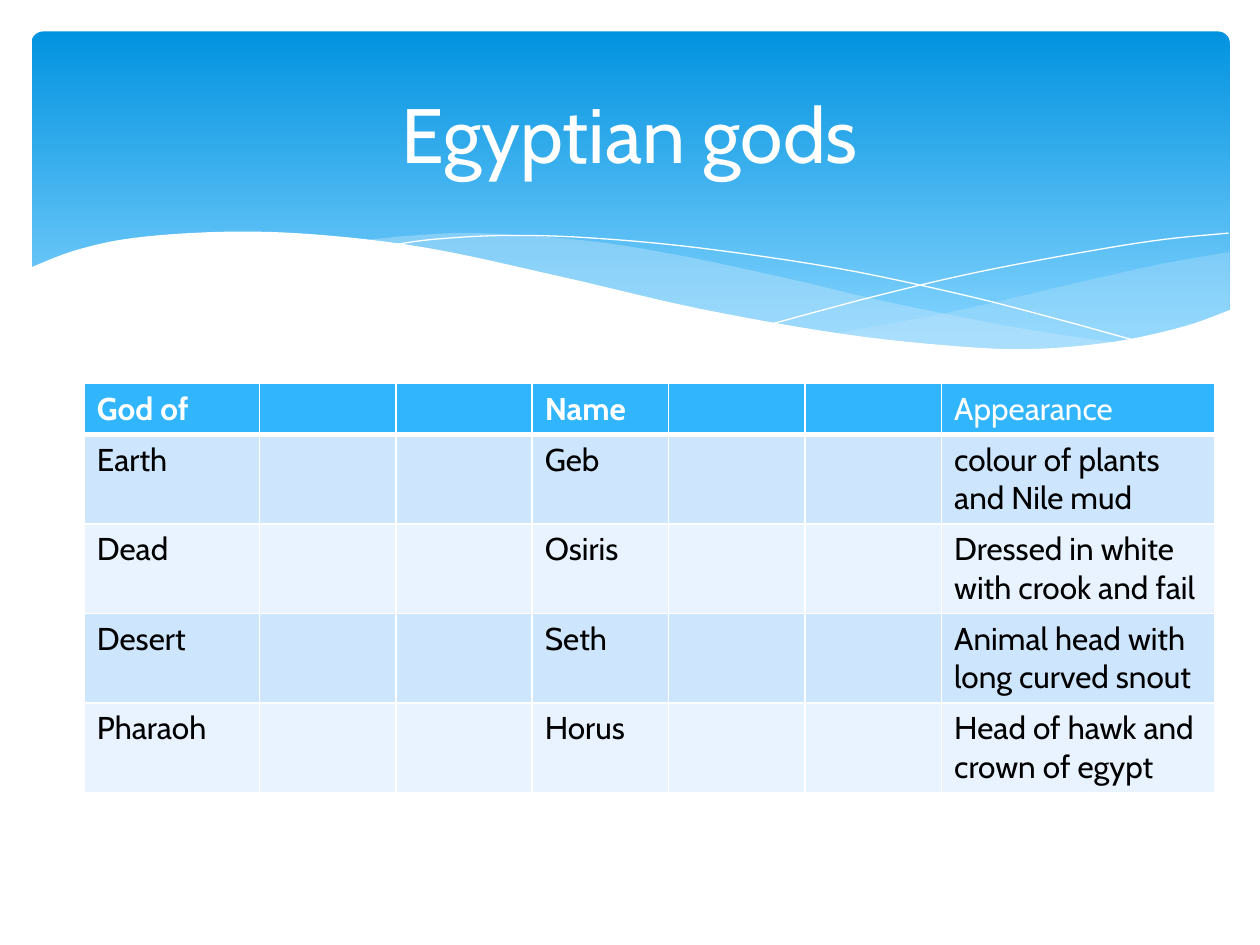
import pptx
import pptx.dml.color
import pptx.enum.shapes
import pptx.enum.text
import pptx.oxml
import pptx.oxml.ns
import pptx.util
from lxml import etree

Pt = pptx.util.Pt
qn = pptx.oxml.ns.qn

FONT = "Cabin"
COLORS = {
    "white": "FFFFFF", "black": "000000",
    "sky_top": "0293E0", "sky_bottom": "83D3FE", "swell": "C6E7FC",
    "header": "31B6FD", "odd_row": "CEE5FE", "even_row": "E8F3FF",
}

# Wave knots, in points from the top left corner of the banner
WHITE_WAVE = [(-1.5, 135.4), (24.5, 125.3), (58.3, 118), (109.4, 114.5), (162, 116),
              (226.8, 123.8), (303.8, 140.4), (381.6, 158.4), (463, 172.8), (530, 180),
              (574.6, 181.4), (620.6, 177), (658.8, 168.5), (685.4, 159)]
WHITE_BASE = [(685.4, 219), (-1.5, 219)]
RIGHT_SWELL_TOP = [(684.7, 126), (645, 133), (602, 142.6), (524, 160.6), (458, 172.8)]
RIGHT_SWELL_BOTTOM = [(458, 172.8), (499.7, 177.8), (560, 182.2), (597, 180.7),
                      (639.4, 174.2), (684.7, 159.8)]
LEFT_SWELL_TOP = [(625, 178.6), (563, 169.2), (490.3, 154.8), (434.9, 141.8),
                  (371.5, 128.2), (316.8, 119.5), (255.6, 115.2), (218.2, 116.6),
                  (188, 119.5)]
LEFT_SWELL_BOTTOM = [(188, 119.5), (242.6, 128.2), (305.3, 141.8), (389.5, 160.6),
                     (460.8, 173.5), (520.6, 180.7), (571, 182.2), (625, 178.6)]
FALLING_LINE = [(204.5, 122.4), (229.7, 118.8), (270.7, 116.6), (319.7, 118),
                (382.3, 123.8), (460.8, 135.4), (529.2, 149.8), (580, 162.7), (635, 177.8)]
RISING_LINE = [(423.4, 167), (482.4, 151.2), (540.7, 137.5), (605.5, 125.3),
               (647.3, 118.8), (684, 115.2)]

COLUMN_WIDTHS = [100] + [78] * 5 + [156]
ROW_HEIGHTS = [29] + [51] * 4
TEXT_COLUMNS = (0, 3, 6)
GODS = [
    ("God of", "Name", "Appearance"),
    ("Earth", "Geb", "colour of plants and Nile mud"),
    ("Dead", "Osiris", "Dressed in white with crook and fail"),
    ("Desert", "Seth", "Animal head with long curved snout"),
    ("Pharaoh", "Horus", "Head of hawk and crown of egypt"),
]


def rgb(name):
    return pptx.dml.color.RGBColor.from_string(COLORS[name])


def format_font(font, size, color, bold=False):
    font.name, font.size, font.bold = FONT, Pt(size), bold
    font.color.rgb = rgb(color)


def smooth(knots, steps=6):
    """Catmull-Rom curve through the knots."""
    padded = [knots[0], *knots, knots[-1]]
    curve = [knots[0]]
    for a, b, c, d in zip(padded, padded[1:], padded[2:], padded[3:]):
        for step in range(1, steps + 1):
            t = step / steps
            curve.append(tuple(
                0.5 * (2 * q + (r - p) * t + (2 * p - 5 * q + 4 * r - s) * t ** 2
                       + (3 * q - p - 3 * r + s) * t ** 3)
                for p, q, r, s in zip(a, b, c, d)))
    return curve


def add_outline(slide, left, top, points, closed):
    places = [(Pt(left + x), Pt(top + y)) for x, y in points]
    builder = slide.shapes.build_freeform(*places[0])
    builder.add_line_segments(places[1:], close=closed)
    shape = builder.convert_to_shape()
    shape.shadow.inherit = False
    return shape


def add_area(slide, left, top, points, color, alpha=100):
    shape = add_outline(slide, left, top, points, True)
    shape.fill.solid()
    shape.fill.fore_color.rgb = rgb(color)
    shape.line.fill.background()
    if alpha < 100:
        fill_color = shape.element.spPr.find(qn("a:solidFill"))[0]
        etree.SubElement(fill_color, qn("a:alpha"), val=str(alpha * 1000))


def add_hairline(slide, left, top, points):
    shape = add_outline(slide, left, top, points, False)
    shape.fill.background()
    shape.line.color.rgb = rgb("white")
    shape.line.width = Pt(0)


def add_banner(slide, left, top, width, height):
    # Gradient sky
    sky = slide.shapes.add_shape(pptx.enum.shapes.MSO_SHAPE.ROUNDED_RECTANGLE,
                                 Pt(left), Pt(top), Pt(width), Pt(height))
    sky.adjustments[0] = 0.034
    sky.shadow.inherit = False
    sky.line.fill.background()
    sky.fill.gradient()
    sky.fill.gradient_angle = 270
    stops = zip(sky.fill.gradient_stops, ("sky_top", "sky_bottom"), (0, 0.9))
    for stop, color, position in stops:
        stop.color.rgb = rgb(color)
        stop.position = position

    # Translucent swells, thin lines and the white wave
    add_area(slide, left, top, smooth(RIGHT_SWELL_TOP) + smooth(RIGHT_SWELL_BOTTOM),
             "swell", 29)
    add_area(slide, left, top, smooth(LEFT_SWELL_TOP) + smooth(LEFT_SWELL_BOTTOM),
             "swell", 40)
    for knots in (FALLING_LINE, RISING_LINE):
        add_hairline(slide, left, top, smooth(knots))
    add_area(slide, left, top, smooth(WHITE_WAVE) + WHITE_BASE, "white")


def add_title(slide, left, top, width, height):
    title = slide.shapes.title
    title.left, title.top, title.width, title.height = map(Pt, (left, top, width, height))
    title.element.getparent().append(title.element)  # in front of the banner
    title.text_frame.text = "Egyptian gods"
    title.text_frame.vertical_anchor = pptx.enum.text.MSO_ANCHOR.MIDDLE
    paragraph = title.text_frame.paragraphs[0]
    paragraph.alignment = pptx.enum.text.PP_ALIGN.CENTER
    format_font(paragraph.runs[0].font, 44, "white")


def set_borders(cell, is_header, below_header):
    properties = cell._tc.get_or_add_tcPr()
    widths = {"L": 1, "R": 1, "T": 3 if below_header else 1, "B": 3 if is_header else 1}
    for index, (side, width) in enumerate(widths.items()):
        line = etree.Element(qn(f"a:ln{side}"), w=str(Pt(width)))
        fill = etree.SubElement(line, qn("a:solidFill"))
        etree.SubElement(fill, qn("a:srgbClr"), val=COLORS["white"])
        properties.insert(index, line)


def add_gods_table(slide, left, top):
    table = slide.shapes.add_table(
        len(ROW_HEIGHTS), len(COLUMN_WIDTHS), Pt(left), Pt(top),
        Pt(sum(COLUMN_WIDTHS)), Pt(sum(ROW_HEIGHTS))).table
    for column, width in zip(table.columns, COLUMN_WIDTHS):
        column.width = Pt(width)
    for row_index, (row, height) in enumerate(zip(table.rows, ROW_HEIGHTS)):
        row.height = Pt(height)
        is_header = row_index == 0
        fill = "header" if is_header else ("even_row", "odd_row")[row_index % 2]
        texts = dict(zip(TEXT_COLUMNS, GODS[row_index]))
        for column_index, cell in enumerate(row.cells):
            cell.fill.solid()
            cell.fill.fore_color.rgb = rgb(fill)
            set_borders(cell, is_header, row_index == 1)
            if column_index in texts:
                cell.text_frame.text = texts[column_index]
                format_font(cell.text_frame.paragraphs[0].runs[0].font, 18,
                            "white" if is_header else "black",
                            bold=is_header and column_index < 6)


def main():
    presentation = pptx.Presentation()
    presentation.slide_width, presentation.slide_height = Pt(720), Pt(540)
    slide = presentation.slides.add_slide(presentation.slide_layouts[5])
    add_banner(slide, 18, 18, 684.7, 194.4)
    add_title(slide, 36, 26.6, 648, 98.6)
    add_gods_table(slide, 48.2, 219)
    presentation.save("out.pptx")


if __name__ == "__main__":
    main()
